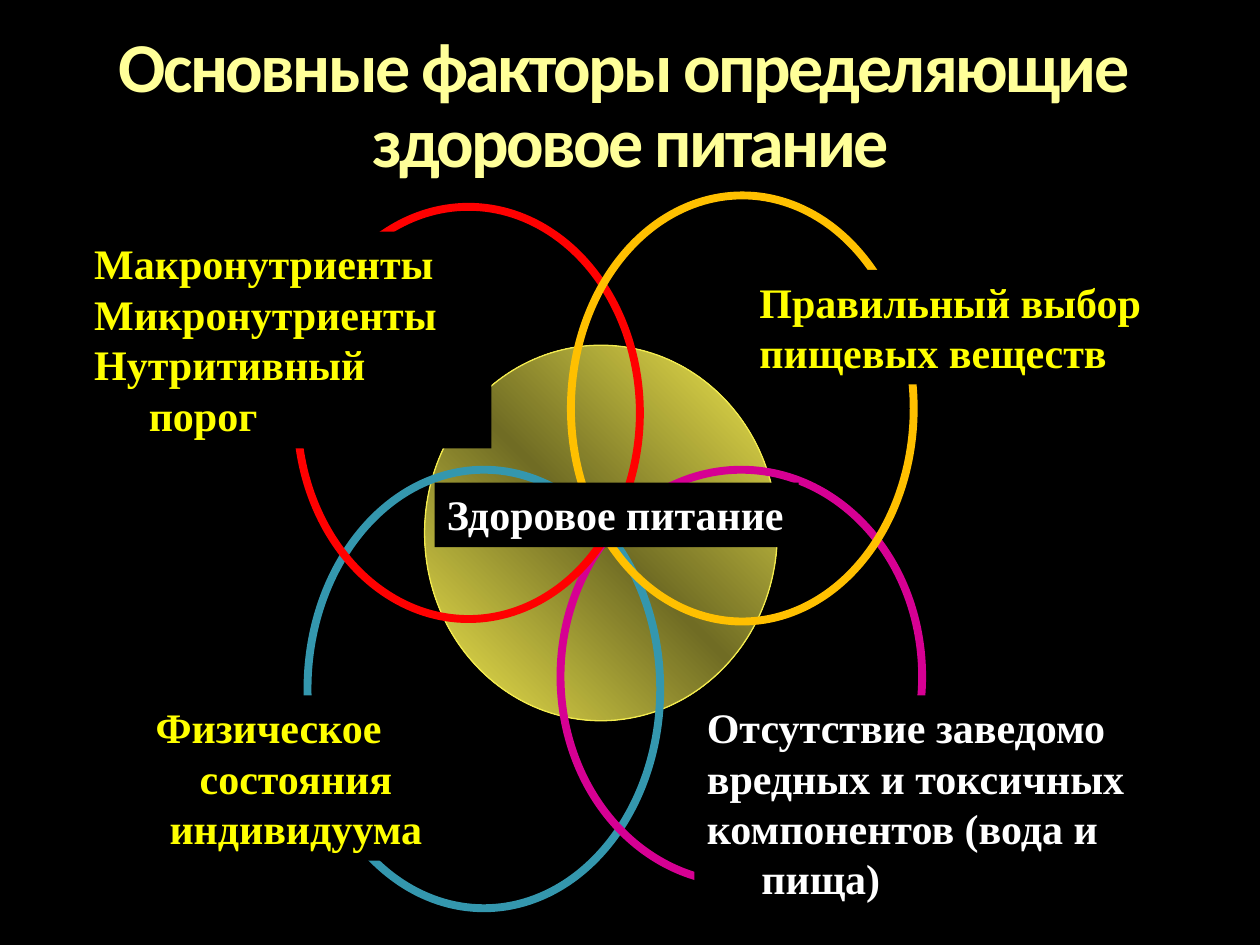
from copy import deepcopy

from pptx import Presentation
from pptx.dml.color import RGBColor
from pptx.enum.shapes import MSO_SHAPE
from pptx.enum.text import MSO_ANCHOR, PP_ALIGN
from pptx.util import Cm, Pt

COLORS = {
    "black": "000000",
    "white": "FFFFFF",
    "title": "FFFF99",
    "yellow": "FFFF00",
    "gold": "F3EB4F",
    "dark gold": "706C24",
    "blue": "3497AE",
    "magenta": "D60093",
    "red": "FF0000",
    "orange": "FFC000",
}
HANGING = 1.1

# Left, top, width, height in cm from the corner of the diagram
CORE = (7.49, 3.02, 7.11, 7.57)
RINGS = [
    ("blue", (5.13, 5.53, 7.11, 8.84)),
    ("magenta", (10.23, 5.53, 7.29, 8.33)),
    ("red", (4.92, 0.23, 6.91, 8.31)),
    ("orange", (10.44, 0, 6.91, 8.59)),
]
LABELS = [
    (["Здоровое питание"], "white", PP_ALIGN.LEFT, (7.69, 5.79, 7.34, 1.3)),
    (["Физическое состояния индивидуума"], "yellow", PP_ALIGN.CENTER,
     (0, 10.08, 8.69, 3.33)),
    (["Отсутствие заведомо", "вредных и токсичных", "компонентов (вода и пища)"],
     "white", PP_ALIGN.LEFT, (12.93, 10.08, 10.34, 3.94)),
    (["Макронутриенты", "Микронутриенты", "Нутритивный порог"],
     "yellow", PP_ALIGN.LEFT, (0.58, 0.73, 8.26, 4.37)),
    (["Правильный выбор", "пищевых веществ"], "yellow", PP_ALIGN.LEFT,
     (13.99, 1.5, 8.43, 2.31)),
]


def color(name):
    return RGBColor.from_string(COLORS[name])


def add_run(paragraph, text, font_name, size, color_name):
    run = paragraph.add_run()
    run.text = text
    run.font.name = font_name
    run.font.size = Pt(size)
    run.font.bold = True
    run.font.color.rgb = color(color_name)
    return run


def add_title(slide, left, top, width, height):
    text_box = slide.shapes.add_textbox(Cm(left), Cm(top), Cm(width), Cm(height))
    frame = text_box.text_frame
    frame.word_wrap = True
    frame.margin_left = frame.margin_right = 0
    frame.margin_top = frame.margin_bottom = 0
    paragraph = frame.paragraphs[0]
    paragraph.alignment = PP_ALIGN.CENTER
    paragraph.line_spacing = 0.9
    lines = ["Основные факторы определяющие ", "здоровое питание"]
    for index, line in enumerate(lines):
        if index:
            paragraph.add_line_break()
        run = add_run(paragraph, line, "Calibri", 40, "title")
        run.font._element.set("spc", "-150")


def add_plain_shape(slide, kind, origin, box):
    left, top, width, height = box
    shape = slide.shapes.add_shape(
        kind, Cm(origin[0] + left), Cm(origin[1] + top), Cm(width), Cm(height))
    shape.shadow.inherit = False
    return shape


def add_core(slide, origin):
    """Add the central disc, dark along its middle band."""
    disc = add_plain_shape(slide, MSO_SHAPE.OVAL, origin, CORE)
    disc.fill.gradient()
    disc.fill.gradient_angle = 45
    stop_list = disc._element.spPr.find(".//{*}gsLst")
    stop_list.insert(1, deepcopy(stop_list[0]))
    names = ["gold", "dark gold", "gold"]
    for index, (stop, name) in enumerate(zip(disc.fill.gradient_stops, names)):
        stop.position = index / 2
        stop.color.rgb = color(name)
    disc.line.color.rgb = color("gold")
    disc.line.width = Pt(0.75)


def add_ring(slide, origin, color_name, box):
    ring = add_plain_shape(slide, MSO_SHAPE.OVAL, origin, box)
    ring.fill.background()
    ring.line.color.rgb = color(color_name)
    ring.line.width = Pt(4.5)


def add_label(slide, origin, lines, color_name, alignment, box):
    label = add_plain_shape(slide, MSO_SHAPE.RECTANGLE, origin, box)
    label.fill.solid()
    label.fill.fore_color.rgb = color("black")
    label.line.fill.background()
    frame = label.text_frame
    frame.word_wrap = True
    frame.vertical_anchor = MSO_ANCHOR.TOP
    for index, line in enumerate(lines):
        paragraph = frame.add_paragraph() if index else frame.paragraphs[0]
        paragraph.alignment = alignment
        properties = paragraph._p.get_or_add_pPr()
        properties.set("marL", str(Cm(HANGING)))
        properties.set("indent", str(-Cm(HANGING)))
        add_run(paragraph, line, "Times New Roman", 24, color_name)


def add_diagram(slide, left, top):
    origin = (left, top)
    add_core(slide, origin)
    for ring in RINGS:
        add_ring(slide, origin, *ring)
    for label in LABELS:
        add_label(slide, origin, *label)


def main():
    presentation = Presentation()
    presentation.slide_width = Cm(25.4)
    presentation.slide_height = Cm(19.05)
    slide = presentation.slides.add_slide(presentation.slide_layouts[6])
    slide.background.fill.solid()
    slide.background.fill.fore_color.rgb = color("black")
    add_title(slide, 1.07, 0.64, 23.29, 4.92)
    add_diagram(slide, 1.07, 3.94)
    presentation.save("out.pptx")


if __name__ == "__main__":
    main()
